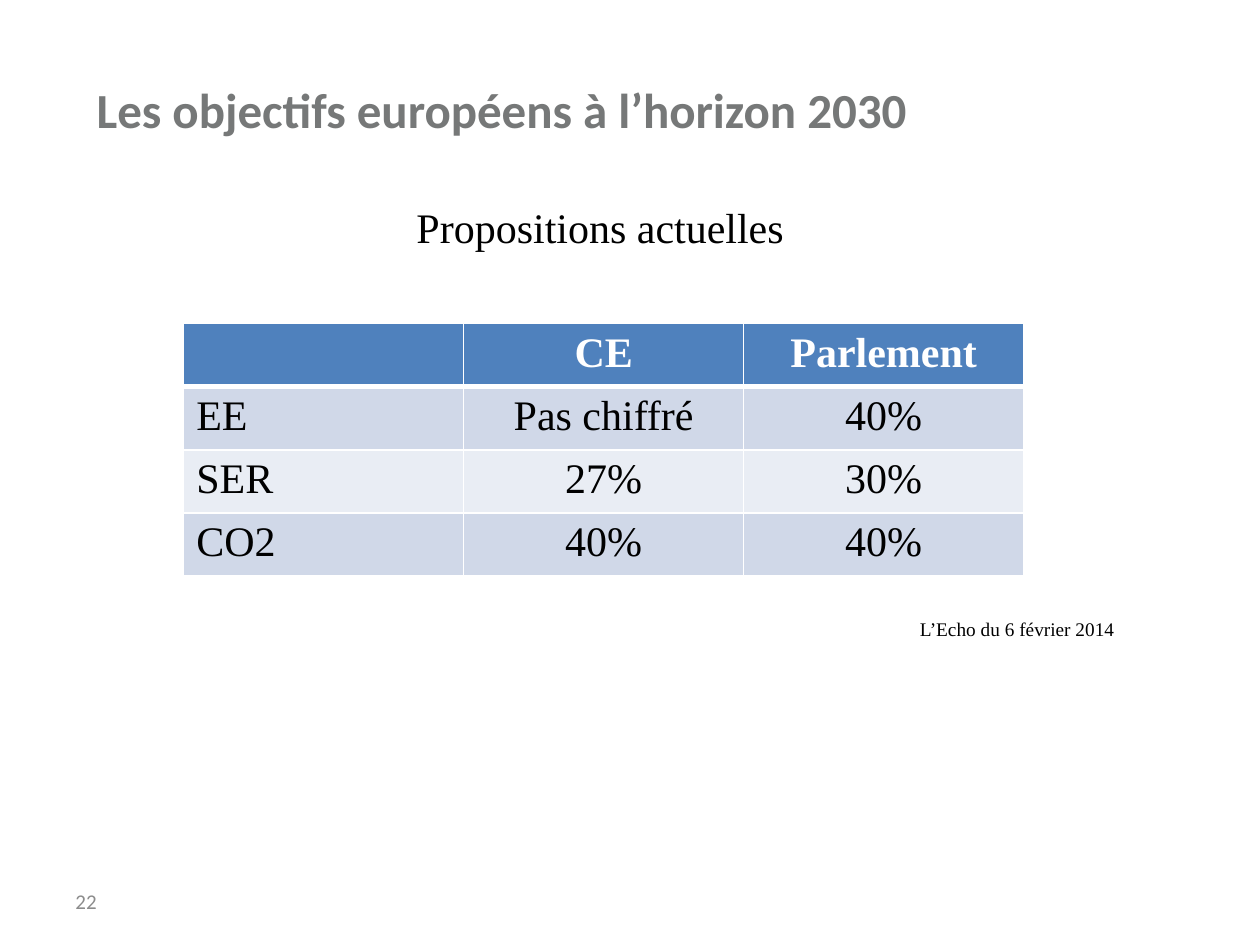
from lxml import etree
from pptx import Presentation
from pptx import util as u
from pptx.dml import color as c
from pptx.enum import text as t
from pptx.oxml import ns

COLORS = {
    "title": "767878", "number": "8C8C8C", "text": "000000", "white": "FFFFFF",
    "header": "4F81BD", "dark band": "D0D8E8", "light band": "E9EDF4",
}
SERIF = "Times New Roman"


def write(frame, words, size, color, font=SERIF, bold=False, align=t.PP_ALIGN.LEFT):
    para = frame.paragraphs[0]
    para.alignment = align
    span = para.add_run()
    span.text = words
    span.font.name = font
    span.font.size = u.Pt(size)
    span.font.bold = bold
    span.font.color.rgb = c.RGBColor.from_string(COLORS[color])


def add_borders(cell, bottom):
    props = cell._tc.get_or_add_tcPr()
    for index, (side, width) in enumerate([("L", 1), ("R", 1), ("T", 1), ("B", bottom)]):
        line = etree.Element(ns.qn(f"a:ln{side}"), w=str(u.Pt(width)))
        fill = etree.SubElement(line, ns.qn("a:solidFill"))
        etree.SubElement(fill, ns.qn("a:srgbClr"), val=COLORS["white"])
        props.insert(index, line)


deck = Presentation()
deck.slide_width, deck.slide_height = u.Pt(720), u.Pt(540)
page = deck.slides.add_slide(deck.slide_layouts[5])

title = page.shapes.title
title.left, title.top, title.width, title.height = u.Pt(48), u.Pt(42), u.Pt(612), u.Pt(69)
title.text_frame.vertical_anchor = t.MSO_ANCHOR.TOP
title.text_frame.auto_size = t.MSO_AUTO_SIZE.NONE
write(title.text_frame, "Les objectifs européens à l’horizon 2030", 28, "title", "Calibri", True)

labels = [
    ("22", (36, 500.5, 168, 29), 12, "number", "Calibri", t.PP_ALIGN.LEFT, t.MSO_ANCHOR.MIDDLE),
    ("L’Echo du 6 février 2014", (518.5, 349, 148, 21), 11, "text", SERIF,
     t.PP_ALIGN.LEFT, t.MSO_ANCHOR.TOP),
    ("Propositions actuelles", (105, 111.5, 476, 36), 24, "text", SERIF,
     t.PP_ALIGN.CENTER, t.MSO_ANCHOR.TOP),
]
for words, place, size, color, font, align, anchor in labels:
    box = page.shapes.add_textbox(*map(u.Pt, place))
    box.text_frame.word_wrap = True
    box.text_frame.vertical_anchor = anchor
    write(box.text_frame, words, size, color, font, align=align)

rows = [
    ("", "CE", "Parlement"),
    ("EE", "Pas chiffré", "40%"),
    ("SER", "27%", "30%"),
    ("CO2", "40%", "40%"),
]
bands = ["header", "dark band", "light band", "dark band"]
heights = [36, 33.7, 33.7, 33.7]
table = page.shapes.add_table(
    4, 3, u.Pt(105), u.Pt(185), u.Pt(480), u.Pt(sum(heights))).table
for column in table.columns:
    column.width = u.Pt(160)
for row, (values, band, height) in enumerate(zip(rows, bands, heights)):
    table.rows[row].height = u.Pt(height)
    is_header = row == 0
    for col, words in enumerate(values):
        cell = table.cell(row, col)
        cell.fill.solid()
        cell.fill.fore_color.rgb = c.RGBColor.from_string(COLORS[band])
        add_borders(cell, 3 if is_header else 1)
        if words:
            write(cell.text_frame, words, 24, "white" if is_header else "text",
                  bold=is_header, align=t.PP_ALIGN.CENTER if col else t.PP_ALIGN.LEFT)

deck.save("out.pptx")
